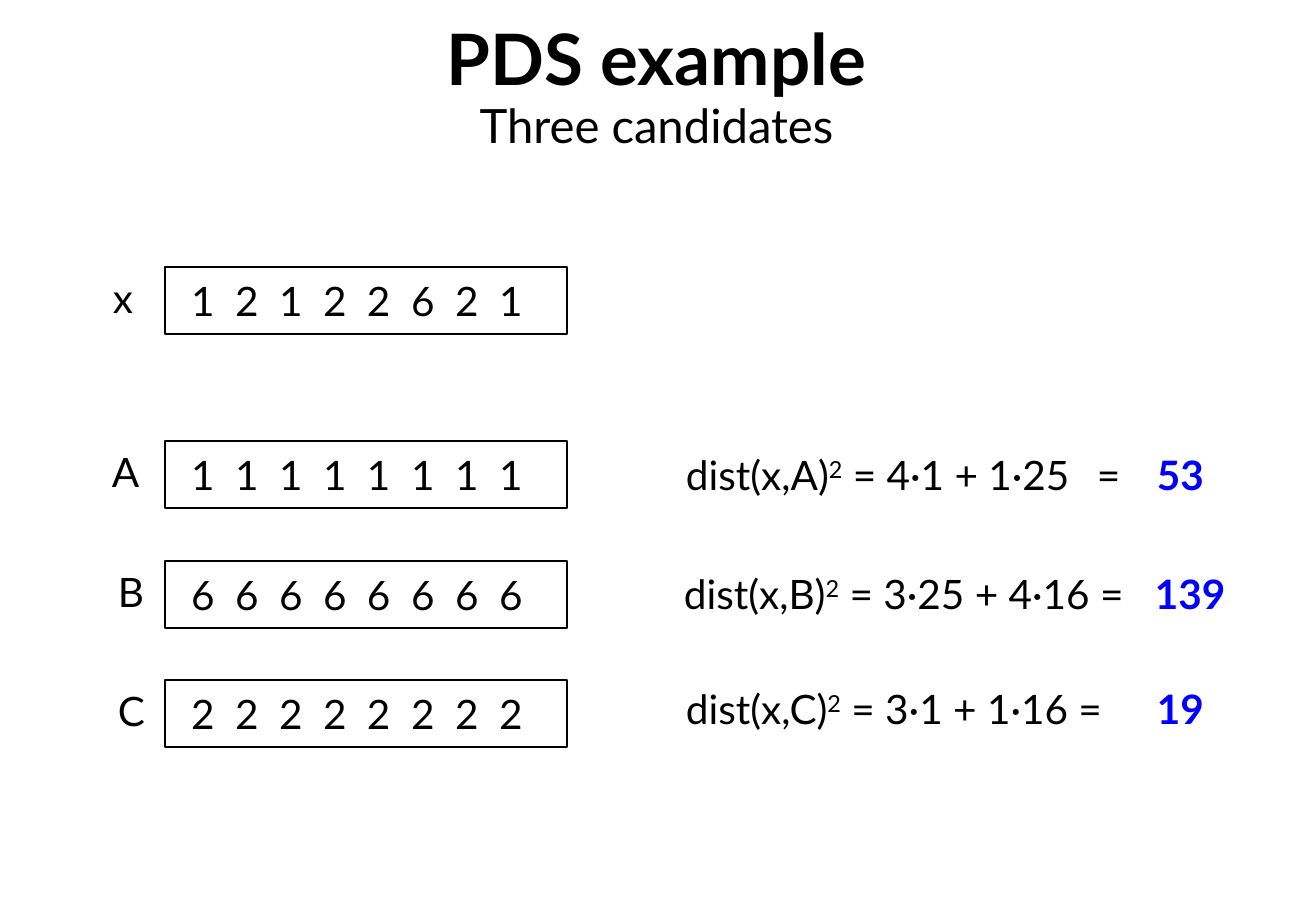
"""Build the PDS example slide: a vector x, three candidates and their distances."""
from lxml.etree import SubElement
from pptx import Presentation
from pptx.dml.color import RGBColor
from pptx.enum.shapes import MSO_SHAPE
from pptx.enum.text import MSO_ANCHOR, PP_ALIGN
from pptx.oxml.ns import qn
from pptx.util import Pt

TITLE = "PDS example"
SUBTITLE = "Three candidates"
VECTORS = [
    {"label": "x", "label_left": 113, "top": 267, "digits": "12122621"},
    {"label": "A", "label_left": 112, "top": 441, "digits": "11111111",
     "sum": " = 4∙1 + 1∙25\t=\t", "result": "53", "sum_at": (686, 450)},
    {"label": "B", "label_left": 118, "top": 561, "digits": "66666666",
     "sum": " = 3∙25 + 4∙16 =\t", "result": "139", "sum_at": (684, 569)},
    {"label": "C", "label_left": 118, "top": 680, "digits": "22222222",
     "sum": " = 3∙1 + 1∙16 =\t", "result": "19", "sum_at": (686, 684)},
]

BLACK = RGBColor(0x00, 0x00, 0x00)
BLUE = RGBColor(0x00, 0x00, 0xFF)
PX = 914400 / 121.5
BODY = {"name": "Lato", "size": Pt(24), "bold": False}
DIGIT_PITCH = 44
DIGIT_TABS = [DIGIT_PITCH * place for place in range(1, 8)]
EQUALS_TAB, RESULT_TAB = 411, 471


def px(*lengths):
    return [round(length * PX) for length in lengths]


def add_text(slide, left, top, width, height=49, tabs=()):
    frame = slide.shapes.add_textbox(*px(left, top, width, height)).text_frame
    for side in ("left", "top", "right", "bottom"):
        setattr(frame, f"margin_{side}", 0)
    frame.word_wrap = True
    paragraph = frame.paragraphs[0]
    if tabs:
        stops = SubElement(paragraph._p.get_or_add_pPr(), qn("a:tabLst"))
        for position in px(*tabs):
            SubElement(stops, qn("a:tab"), pos=str(position), algn="l")
    return frame, paragraph


def add_run(paragraph, text, color=BLACK, raised=False, **changes):
    run = paragraph.add_run()
    run.text = text
    for key, value in {**BODY, **changes}.items():
        setattr(run.font, key, value)
    run.font.color.rgb = color
    if raised:
        run._r.get_or_add_rPr().set("baseline", "30000")


def add_title(slide):
    frame, heading = add_text(slide, 92, 21, 1129, 134)
    frame.vertical_anchor = MSO_ANCHOR.MIDDLE
    heading.alignment = PP_ALIGN.CENTER
    heading.line_spacing = 0.93
    add_run(heading, TITLE, size=Pt(42), bold=True)
    heading.add_line_break()
    add_run(heading, SUBTITLE, size=Pt(28))


def add_vector(slide, vector):
    top = vector["top"]
    frame = slide.shapes.add_shape(MSO_SHAPE.RECTANGLE, *px(165, top, 402, 67))
    frame.shadow.inherit = False
    frame.fill.background()
    frame.line.color.rgb = BLACK
    frame.line.width = Pt(0.75)

    _, label = add_text(slide, vector["label_left"], top + 6, 40)
    add_run(label, vector["label"])
    _, digits = add_text(slide, 191, top + 9, 359, tabs=DIGIT_TABS)
    add_run(digits, "\t".join(vector["digits"]))


def add_distance(slide, vector):
    tabs = (EQUALS_TAB, RESULT_TAB) if vector["sum"].count("\t") > 1 else (RESULT_TAB,)
    _, distance = add_text(slide, *vector["sum_at"], 583, tabs=tabs)
    add_run(distance, f"dist(x,{vector['label']})")
    add_run(distance, "2", raised=True)
    add_run(distance, vector["sum"])
    add_run(distance, vector["result"], BLUE, bold=True)


def main():
    deck = Presentation()
    deck.slide_width, deck.slide_height = px(1316, 911)
    slide = deck.slides.add_slide(deck.slide_layouts[6])
    add_title(slide)
    for vector in VECTORS:
        add_vector(slide, vector)
        if "sum" in vector:
            add_distance(slide, vector)
    deck.save("out.pptx")


if __name__ == "__main__":
    main()
